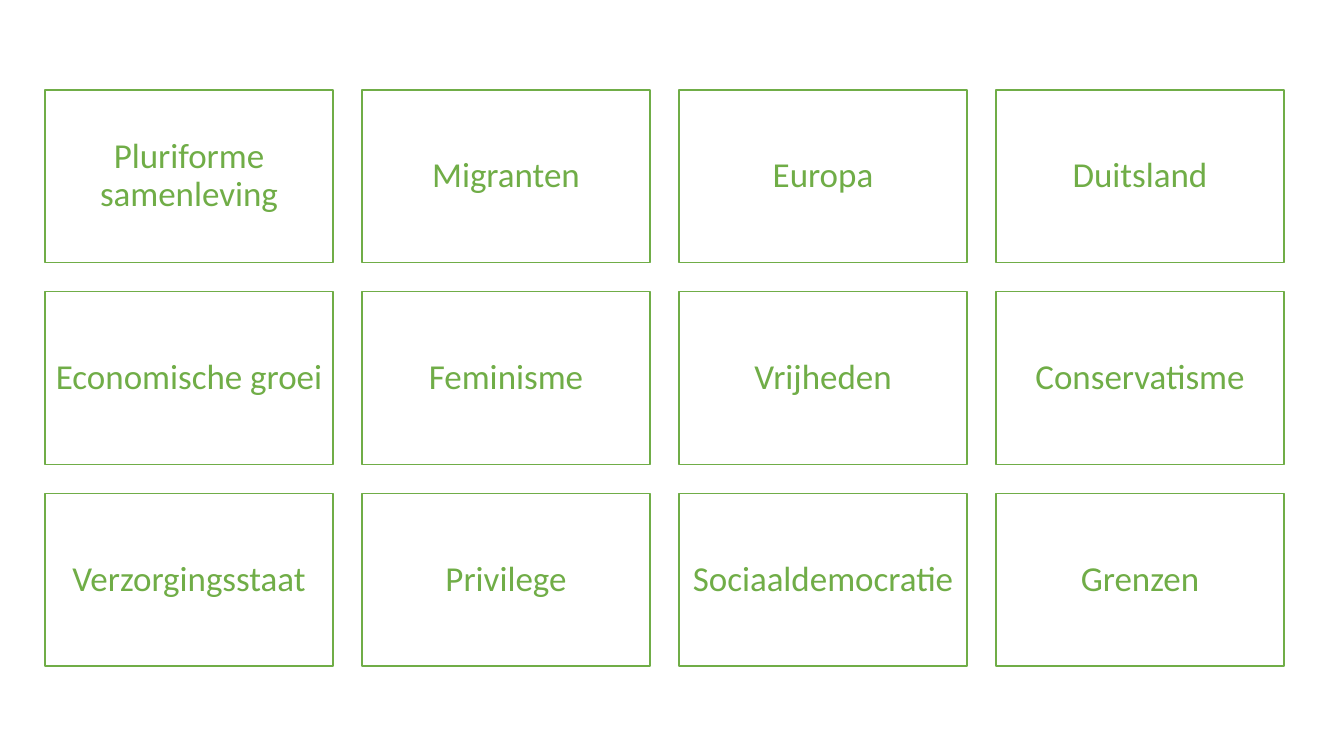
from pptx import Presentation
from pptx.dml.color import RGBColor
from pptx.enum.shapes import MSO_SHAPE
from pptx.enum.text import MSO_ANCHOR, PP_ALIGN
from pptx.util import Pt

# Content
CONCEPTS = [
    ["Pluriforme samenleving", "Migranten", "Europa", "Duitsland"],
    ["Economische groei", "Feminisme", "Vrijheden", "Conservatisme"],
    ["Verzorgingsstaat", "Privilege", "Sociaaldemocratie", "Grenzen"],
]

GREEN = RGBColor(0x70, 0xAD, 0x47)
WHITE = RGBColor(0xFF, 0xFF, 0xFF)

# Layout in px, 100.8 px to the inch
SLIDE_W, SLIDE_H = 1344, 756
GRID_LEFT, GRID_TOP, GRID_W, GRID_H = 45, 90, 1239, 576
GAP, INSET = 29, 10


def px(n):
    return round(n * 914400 / 100.8)


def add_card(slide, text, left, top, width, height):
    sp = slide.shapes.add_shape(
        MSO_SHAPE.RECTANGLE, px(left), px(top), px(width), px(height))
    sp.shadow.inherit = False
    sp.fill.solid()
    sp.fill.fore_color.rgb = WHITE
    sp.line.color.rgb = GREEN
    sp.line.width = Pt(1)
    tf = sp.text_frame
    tf.word_wrap = True
    tf.vertical_anchor = MSO_ANCHOR.MIDDLE
    tf.margin_left = tf.margin_right = px(INSET)
    tf.margin_top = tf.margin_bottom = px(INSET)
    tf.text = text
    p = tf.paragraphs[0]
    p.alignment = PP_ALIGN.CENTER
    p.line_spacing = 0.9
    font = p.runs[0].font
    font.name = "Calibri"
    font.size = Pt(25)
    font.color.rgb = GREEN


def main():
    prs = Presentation()
    prs.slide_width, prs.slide_height = px(SLIDE_W), px(SLIDE_H)
    slide = prs.slides.add_slide(prs.slide_layouts[6])

    # Grid of concept cards
    rows, cols = len(CONCEPTS), len(CONCEPTS[0])
    card_w = (GRID_W - GAP * (cols - 1)) / cols
    card_h = (GRID_H - GAP * (rows - 1)) / rows
    for row, concepts in enumerate(CONCEPTS):
        for col, concept in enumerate(concepts):
            add_card(slide, concept,
                     GRID_LEFT + col * (card_w + GAP),
                     GRID_TOP + row * (card_h + GAP),
                     card_w, card_h)

    prs.save("out.pptx")


if __name__ == "__main__":
    main()
